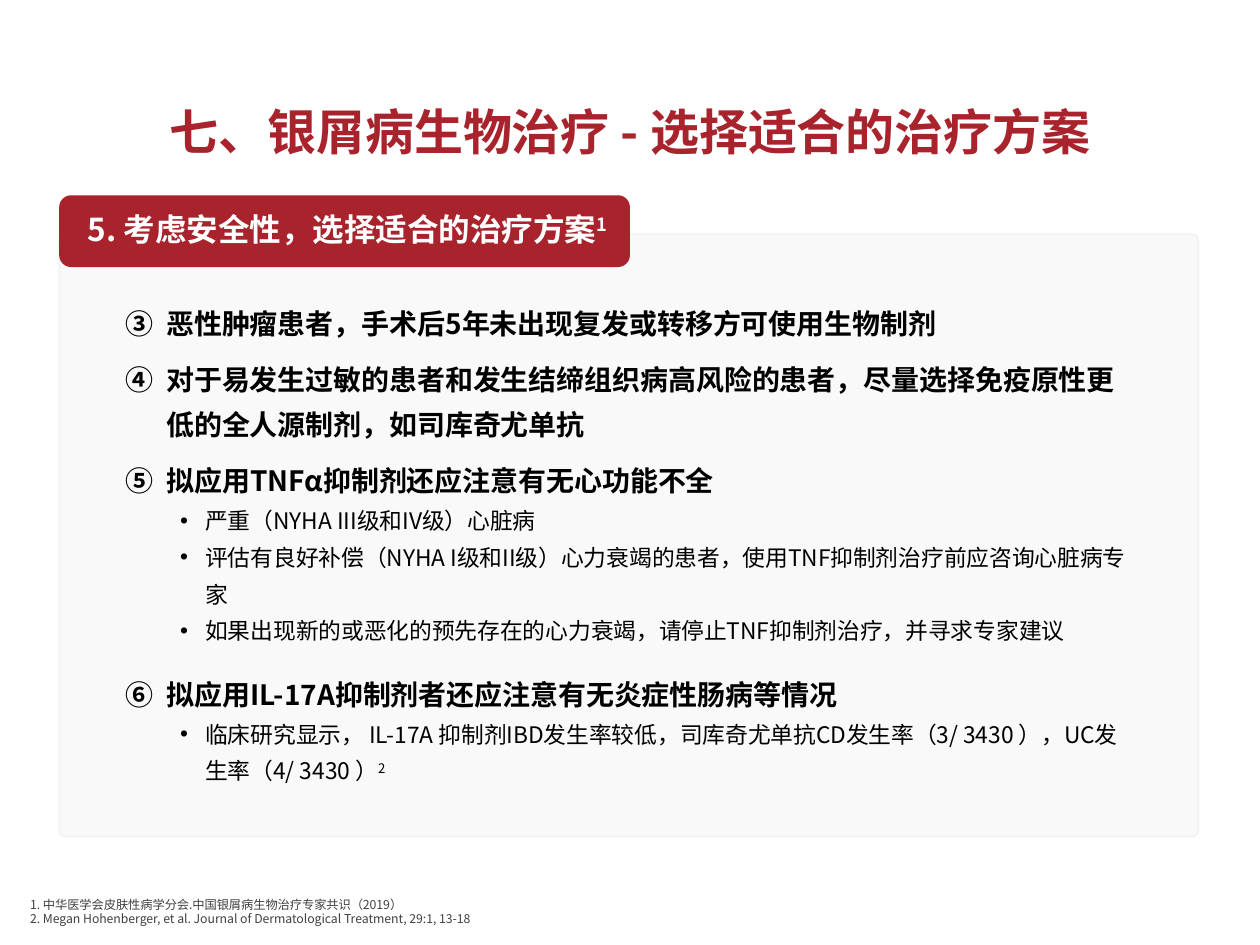
from lxml.etree import SubElement
from pptx import Presentation
from pptx.dml.color import RGBColor
from pptx.enum.shapes import MSO_SHAPE
from pptx.enum.text import MSO_ANCHOR, PP_ALIGN
from pptx.oxml.ns import qn
from pptx.util import Inches, Pt

FONT = "Noto Sans CJK SC"
COLORS = {"red": "A9232D", "panel": "F9F9F9", "border": "F2F2F2",
          "white": "FFFFFF", "black": "000000", "grey": "404040"}

TITLE = "七、银屑病生物治疗 - 选择适合的治疗方案"
HEADING = ("5. 考虑安全性，选择适合的治疗方案", "1")
ADVICE = [
    ("恶性肿瘤患者，手术后5年未出现复发或转移方可使用生物制剂", []),
    ("对于易发生过敏的患者和发生结缔组织病高风险的患者，尽量选择免疫原性更低的全人源制剂，如司库奇尤单抗", []),
    ("拟应用TNFα抑制剂还应注意有无心功能不全", [
        ("严重（NYHA III级和IV级）心脏病", ""),
        ("评估有良好补偿（NYHA I级和II级）心力衰竭的患者，使用TNF抑制剂治疗前应咨询心脏病专家", ""),
        ("如果出现新的或恶化的预先存在的心力衰竭，请停止TNF抑制剂治疗，并寻求专家建议", ""),
    ]),
    ("拟应用IL-17A抑制剂者还应注意有无炎症性肠病等情况", [
        ("临床研究显示， IL-17A 抑制剂IBD发生率较低，司库奇尤单抗CD发生率（3/ 3430 ），UC发生率（4/ 3430 ）", "2"),
    ]),
]
FIRST_NUMBER = 3
ADVICE_SPACING = 1.35
REFERENCES = [
    "1. 中华医学会皮肤性病学分会.中国银屑病生物治疗专家共识（2019）",
    "2. Megan Hohenberger, et al. Journal of Dermatological Treatment, 29:1, 13-18",
]


def rgb(name):
    return RGBColor.from_string(COLORS[name])


def add_run(paragraph, text, size, color, bold=False, raised=False):
    run = paragraph.add_run()
    run.text = text
    run.font.size = Pt(size)
    run.font.bold = bold
    run.font.color.rgb = rgb(color)
    run.font.name = FONT
    properties = run._r.get_or_add_rPr()
    SubElement(properties, qn("a:ea")).set("typeface", FONT)
    if raised:
        properties.set("baseline", "30000")


def indent(paragraph, left, hanging):
    properties = paragraph._p.get_or_add_pPr()
    properties.set("marL", str(Inches(left)))
    properties.set("indent", str(-Inches(hanging)))
    return properties


def add_text_frame(slide, box, anchor):
    frame = slide.shapes.add_textbox(*map(Inches, box)).text_frame
    frame.word_wrap = True
    frame.vertical_anchor = anchor
    return frame


def add_rounded(slide, box, fill):
    shape = slide.shapes.add_shape(MSO_SHAPE.ROUNDED_RECTANGLE, *map(Inches, box))
    shape.shadow.inherit = False
    shape.fill.solid()
    shape.fill.fore_color.rgb = rgb(fill)
    return shape


def next_paragraph(frame):
    first = frame.paragraphs[0]
    return frame.add_paragraph() if first.runs else first


def add_title(slide):
    frame = add_text_frame(slide, (0.69, 0.69, 8.62, 0.76), MSO_ANCHOR.MIDDLE)
    title = frame.paragraphs[0]
    title.alignment = PP_ALIGN.CENTER
    title.line_spacing = 0.9
    add_run(title, TITLE, 28, "red", bold=True)


def add_references(slide):
    frame = add_text_frame(slide, (0.14, 6.9, 9.38, 0.5), MSO_ANCHOR.BOTTOM)
    for text in REFERENCES:
        reference = next_paragraph(frame)
        indent(reference, 0.25, 0.25)
        add_run(reference, text, 7, "grey")


def add_panel(slide):
    panel = add_rounded(slide, (0.47, 1.86, 9.04, 4.78), "panel")
    panel.adjustments[0] = 0.01
    panel.line.color.rgb = rgb("border")
    panel.line.width = Pt(1)


def add_heading(slide):
    banner = add_rounded(slide, (0.47, 1.55, 4.53, 0.57), "red")
    banner.line.fill.background()
    frame = banner.text_frame
    frame.word_wrap = True
    frame.vertical_anchor = MSO_ANCHOR.MIDDLE
    frame.margin_left = Inches(0.2)
    heading = frame.paragraphs[0]
    heading.alignment = PP_ALIGN.LEFT
    heading.line_spacing = 0.9
    text, citation = HEADING
    add_run(heading, text, 18, "white", bold=True)
    add_run(heading, citation, 18, "white", bold=True, raised=True)


def add_advice(slide):
    frame = add_text_frame(slide, (1, 2.34, 8, 3.99), MSO_ANCHOR.TOP)
    frame.margin_left = frame.margin_top = frame.margin_right = frame.margin_bottom = 0
    after_details = False
    for position, (text, details) in enumerate(ADVICE):
        point = next_paragraph(frame)
        number = SubElement(indent(point, 0.32, 0.32), qn("a:buAutoNum"))
        number.set("type", "circleNumDbPlain")
        number.set("startAt", str(FIRST_NUMBER))
        point.line_spacing = ADVICE_SPACING
        if position:
            point.space_before = Pt(12 if after_details else 6)
        add_run(point, text, 16, "black", bold=True)
        for detail_text, citation in details:
            detail = next_paragraph(frame)
            detail.level = 1
            properties = indent(detail, 0.63, 0.2)
            SubElement(properties, qn("a:buFont")).set("typeface", "Arial")
            SubElement(properties, qn("a:buChar")).set("char", "•")
            detail.line_spacing = ADVICE_SPACING
            add_run(detail, detail_text, 13, "black")
            if citation:
                add_run(detail, citation, 13, "black", raised=True)
        after_details = bool(details)


def main():
    presentation = Presentation()
    presentation.slide_width = Inches(10)
    presentation.slide_height = Inches(7.5)
    slide = presentation.slides.add_slide(presentation.slide_layouts[6])
    add_title(slide)
    add_references(slide)
    add_panel(slide)
    add_heading(slide)
    add_advice(slide)
    presentation.save("out.pptx")


if __name__ == "__main__":
    main()
